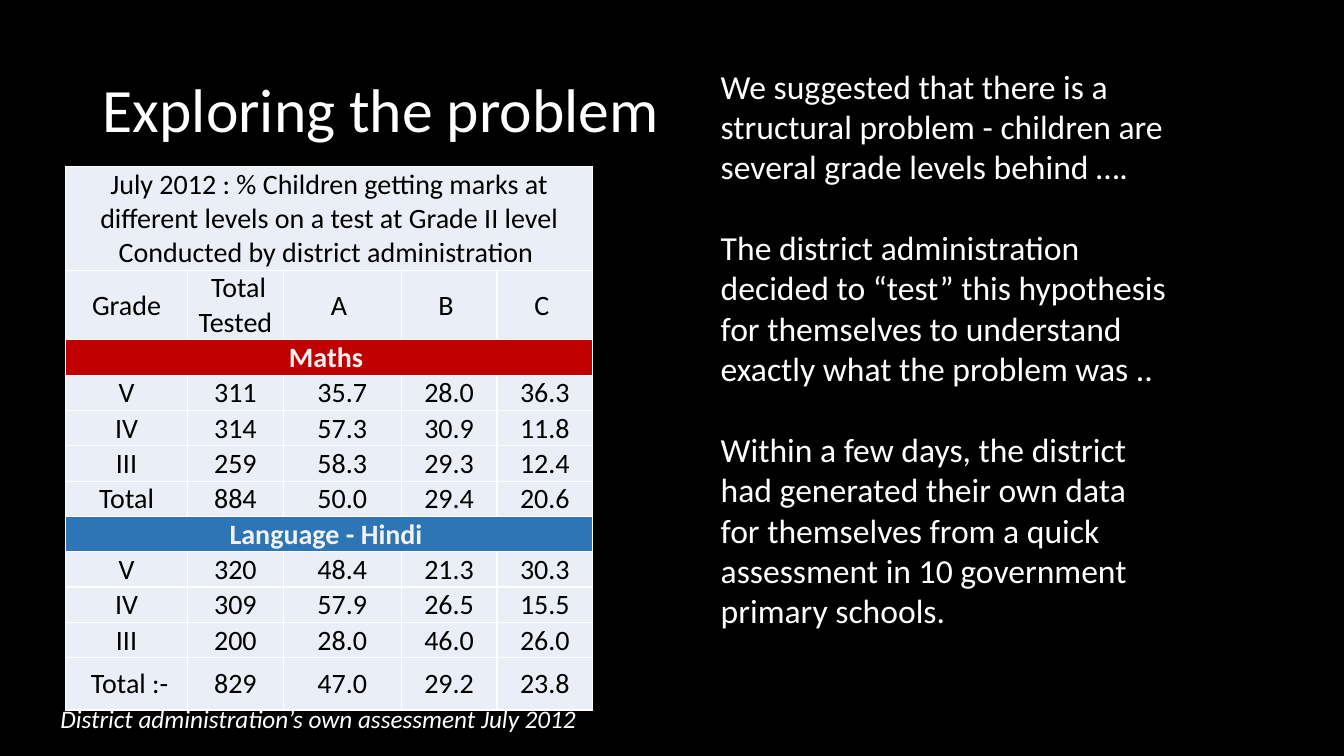
from lxml import etree
from pptx import Presentation
from pptx.dml.color import RGBColor
from pptx.enum.text import MSO_ANCHOR, MSO_AUTO_SIZE, PP_ALIGN
from pptx.oxml.ns import qn
from pptx.util import Inches, Pt

MIDDLE = MSO_ANCHOR.MIDDLE
LEFT, CENTER = PP_ALIGN.LEFT, PP_ALIGN.CENTER
GROW = MSO_AUTO_SIZE.SHAPE_TO_FIT_TEXT

BLACK = RGBColor(0x00, 0x00, 0x00)
WHITE = RGBColor(0xFF, 0xFF, 0xFF)
PALE = RGBColor(0xEA, 0xEF, 0xF7)
LIGHT = RGBColor(0xF2, 0xF2, 0xF2)
RED = RGBColor(0xC0, 0x00, 0x00)
BLUE = RGBColor(0x2E, 0x75, 0xB6)

HEAD = [
    "July 2012 : % Children getting marks at different levels on a test at Grade II level",
    "Conducted by district administration ",
]
# A row with one entry spans the whole table
ROWS = [
    ["\n".join(HEAD)],
    ["Grade", " Total Tested", "A ", "B ", "C "],
    ["Maths "],
    ["V", "311", "35.7", "28.0", "36.3"],
    ["IV", "314", "57.3", "30.9", "11.8"],
    ["III", "259", "58.3", "29.3", "12.4"],
    [" Total ", "884", "50.0", "29.4", "20.6"],
    ["Language - Hindi "],
    ["V", "320", "48.4", "21.3", "30.3"],
    ["IV", "309", "57.9", "26.5", "15.5"],
    ["III", "200", "28.0", "46.0", "26.0"],
    [" Total :-", "829", "47.0", "29.2", "23.8"],
]
BANDS = {2: RED, 7: BLUE}
WIDTHS = [1.21, 0.95, 1.17, 0.95, 0.95]
HEIGHTS = [1, 0.67] + [0.34] * 9 + [0.52]

STORY = [
    "We suggested that there is a structural problem - children are several grade levels behind ….",
    "The district administration decided to “test” this hypothesis for themselves "
    "to understand exactly what the problem was ..",
    "Within a few days, the district had generated their own data for themselves "
    "from a quick assessment in 10 government primary schools.",
]


class Page:
    face = "Calibri"

    def __init__(self, deck):
        self.slide = deck.slides.add_slide(deck.slide_layouts[5])
        fill = self.slide.background.fill
        fill.solid()
        fill.fore_color.rgb = BLACK

    def put(self, frame, text, size, color=WHITE, align=LEFT, bold=False, italic=False):
        frame.text = text
        for para in frame.paragraphs:
            para.alignment = align
            font = para.font
            font.name, font.size = self.face, Pt(size)
            font.bold, font.italic = bold, italic
            font.color.rgb = color

    def title(self, text, box):
        shape = self.slide.shapes.title
        shape.left, shape.top, shape.width, shape.height = map(Inches, box)
        frame = shape.text_frame
        frame.vertical_anchor = MIDDLE
        self.put(frame, text, 44)
        frame.paragraphs[0].line_spacing = 0.9

    def text(self, lines, box, size, gap=0, italic=False):
        frame = self.slide.shapes.add_textbox(*map(Inches, box)).text_frame
        frame.word_wrap = True
        frame.auto_size = GROW
        self.put(frame, "\n".join(lines), size, italic=italic)
        for para in frame.paragraphs[1:]:
            para.space_before = Pt(gap)

    def border(self, cell):
        props = cell._tc.get_or_add_tcPr()
        for spot, side in enumerate(("lnL", "lnR", "lnT", "lnB")):
            line = etree.Element(qn("a:" + side), w=str(Pt(1)))
            fill = etree.SubElement(line, qn("a:solidFill"))
            etree.SubElement(fill, qn("a:srgbClr"), val=str(WHITE))
            props.insert(spot, line)

    def table(self, rows, widths, heights, bands, left, top):
        box = map(Inches, (left, top, sum(widths), sum(heights)))
        grid = self.slide.shapes.add_table(len(rows), len(widths), *box).table
        grid.first_row = grid.horz_banding = False
        for col, width in zip(grid.columns, widths):
            col.width = Inches(width)
        for r, (row, height) in enumerate(zip(rows, heights)):
            grid.rows[r].height = Inches(height)
            band = r in bands
            if len(row) == 1:
                grid.cell(r, 0).merge(grid.cell(r, len(widths) - 1))
            for c in range(len(widths)):
                cell = grid.cell(r, c)
                cell.fill.solid()
                cell.fill.fore_color.rgb = bands.get(r, PALE)
                cell.vertical_anchor = MIDDLE
                cell.margin_left = cell.margin_right = cell.margin_top = Inches(0.01)
                cell.margin_bottom = 0
                self.border(cell)
                text = row[c] if c < len(row) else ""
                self.put(cell.text_frame, text, 20, LIGHT if band else BLACK, CENTER, band)


def main():
    deck = Presentation()
    deck.slide_width, deck.slide_height = Inches(13.33), Inches(7.5)
    page = Page(deck)

    # Heading
    page.title("Exploring the problem", (0.92, 0.4, 11.5, 1.44))

    # Test results
    page.table(ROWS, WIDTHS, HEIGHTS, BANDS, 0.65, 1.65)

    # Story and source
    page.text(STORY, (7.05, 0.6, 4.65, 5.76), 24, gap=29)
    page.text(["District administration’s own assessment July 2012"],
              (0.5, 6.93, 5.38, 0.4), 18, italic=True)

    deck.save("out.pptx")


if __name__ == "__main__":
    main()
